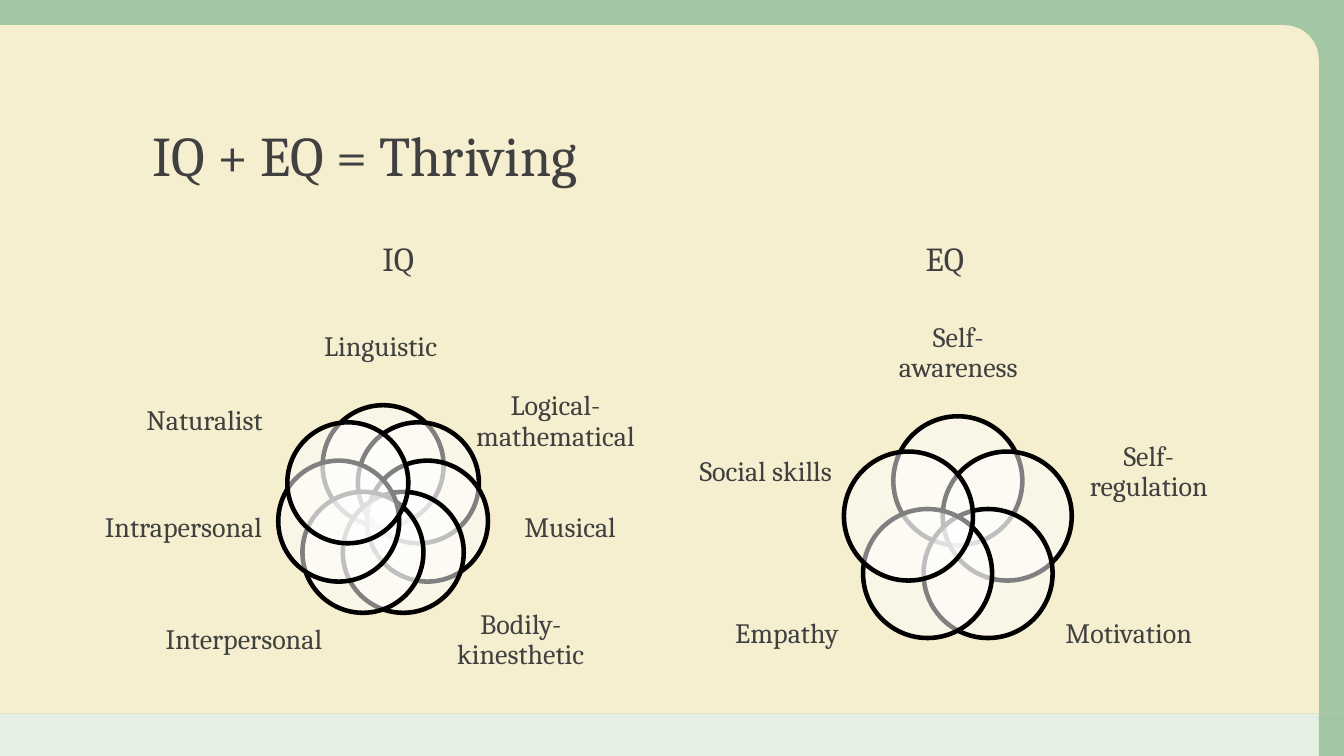
from dataclasses import dataclass
from math import cos, pi, sin

from lxml import etree
from pptx import Presentation
from pptx.dml.color import RGBColor
from pptx.enum.shapes import MSO_SHAPE
from pptx.enum.text import MSO_ANCHOR, MSO_AUTO_SIZE, PP_ALIGN
from pptx.oxml.ns import qn
from pptx.util import Pt

RECTANGLE, ELLIPSE = MSO_SHAPE.RECTANGLE, MSO_SHAPE.OVAL
ROUND_CORNER = MSO_SHAPE.ROUND_1_RECTANGLE
LEFT, CENTER = PP_ALIGN.LEFT, PP_ALIGN.CENTER
MIDDLE, BOTTOM = MSO_ANCHOR.MIDDLE, MSO_ANCHOR.BOTTOM
NO_AUTOFIT = MSO_AUTO_SIZE.NONE

EMU_PER_PX = 9144  # 100 px to the inch
TITLE_ONLY = 5
FONT = "Cambria"
TEXT, CREAM, GREEN, MINT = "404040", "F5EECF", "488E4A", "D8EBD8"
WHITE, BLACK = "FFFFFF", "000000"


@dataclass(frozen=True)
class Box:
    left: int
    top: int
    width: int
    height: int

    def emu(self) -> list[int]:
        return [value * EMU_PER_PX for value in
                (self.left, self.top, self.width, self.height)]


@dataclass(frozen=True)
class Label:
    text: str
    box: Box


@dataclass(frozen=True)
class Ring:
    heading: str
    heading_box: Box
    center_x: int
    center_y: int
    radius: int
    diameter: int
    labels: list[Label]


RINGS = [
    Ring("IQ", Box(141, 217, 508, 83), 380, 507, 45, 120, [
        Label("Linguistic", Box(282, 308, 191, 73)),
        Label("Logical-mathematical", Box(466, 378, 170, 81)),
        Label("Musical", Box(502, 481, 127, 86)),
        Label("Bodily-kinesthetic", Box(448, 596, 137, 79)),
        Label("Interpersonal", Box(142, 596, 200, 79)),
        Label("Intrapersonal", Box(97, 481, 170, 86)),
        Label("Naturalist", Box(138, 378, 130, 81)),
    ]),
    Ring("EQ", Box(683, 217, 508, 83), 950, 528, 51, 128, [
        Label("Self-awareness", Box(876, 308, 149, 86)),
        Label("Self-regulation", Box(1073, 422, 133, 94)),
        Label("Motivation", Box(1053, 582, 133, 94)),
        Label("Empathy", Box(714, 582, 133, 94)),
        Label("Social skills", Box(693, 422, 133, 94)),
    ]),
]


def color(hex_code: str) -> RGBColor:
    return RGBColor.from_string(hex_code)


def add_filled(shapes, kind, box: Box, fill: str, opacity: int = 100,
               line: str | None = None):
    shape = shapes.add_shape(kind, *box.emu())
    shape.shadow.inherit = False
    shape.fill.solid()
    shape.fill.fore_color.rgb = color(fill)
    if opacity < 100:
        fill_color = shape._element.spPr.find(qn("a:solidFill"))[0]
        etree.SubElement(fill_color, qn("a:alpha"), val=str(opacity * 1000))
    if line:
        shape.line.color.rgb = color(line)
        shape.line.width = Pt(3.25)
    else:
        shape.line.fill.background()
    return shape


def write_text(shape, text: str, *, size: int, align=CENTER, anchor=MIDDLE,
               inset: bool = True) -> None:
    frame = shape.text_frame
    frame.word_wrap = True
    frame.auto_size = NO_AUTOFIT
    frame.vertical_anchor = anchor
    if not inset:
        frame.margin_left = frame.margin_right = 0
        frame.margin_top = frame.margin_bottom = 0
    paragraph = frame.paragraphs[0]
    paragraph.alignment = align
    paragraph.line_spacing = 0.9
    run = paragraph.add_run()
    run.text = text
    run.font.name = FONT
    run.font.size = Pt(size)
    run.font.color.rgb = color(TEXT)


def draw_background(shapes) -> None:
    add_filled(shapes, RECTANGLE, Box(0, 708, 1308, 42), MINT, 70)
    add_filled(shapes, RECTANGLE, Box(1308, 708, 25, 42), GREEN, 50)
    add_filled(shapes, RECTANGLE, Box(0, 0, 1333, 708), GREEN, 50)
    panel = add_filled(shapes, ROUND_CORNER, Box(0, 25, 1308, 683), CREAM)
    panel.adjustments[0] = 0.05


def draw_ring(shapes, ring: Ring) -> None:
    heading = shapes.add_textbox(*ring.heading_box.emu())
    write_text(heading, ring.heading, size=24)

    # Circles run clockwise from the top, each with its label
    group = shapes.add_group_shape()
    for index, label in enumerate(ring.labels):
        angle = 2 * pi * index / len(ring.labels)
        left = ring.center_x + ring.radius * sin(angle) - ring.diameter / 2
        top = ring.center_y - ring.radius * cos(angle) - ring.diameter / 2
        circle = Box(round(left), round(top), ring.diameter, ring.diameter)
        add_filled(group.shapes, ELLIPSE, circle, WHITE, 50, BLACK)
        caption = group.shapes.add_textbox(*label.box.emu())
        write_text(caption, label.text, size=20, inset=False)


def main() -> None:
    presentation = Presentation()
    presentation.slide_width = 1333 * EMU_PER_PX
    presentation.slide_height = 750 * EMU_PER_PX
    slide = presentation.slides.add_slide(
        presentation.slide_layouts[TITLE_ONLY])
    shapes = slide.shapes

    draw_background(shapes)

    # Title, raised above the background
    title = shapes.title
    title.left, title.top, title.width, title.height = Box(
        141, 62, 1050, 130).emu()
    write_text(title, "IQ + EQ = Thriving", size=40, align=LEFT,
               anchor=BOTTOM)
    shapes._spTree.append(title._element)

    for ring in RINGS:
        draw_ring(shapes, ring)
    presentation.save("out.pptx")


if __name__ == "__main__":
    main()
